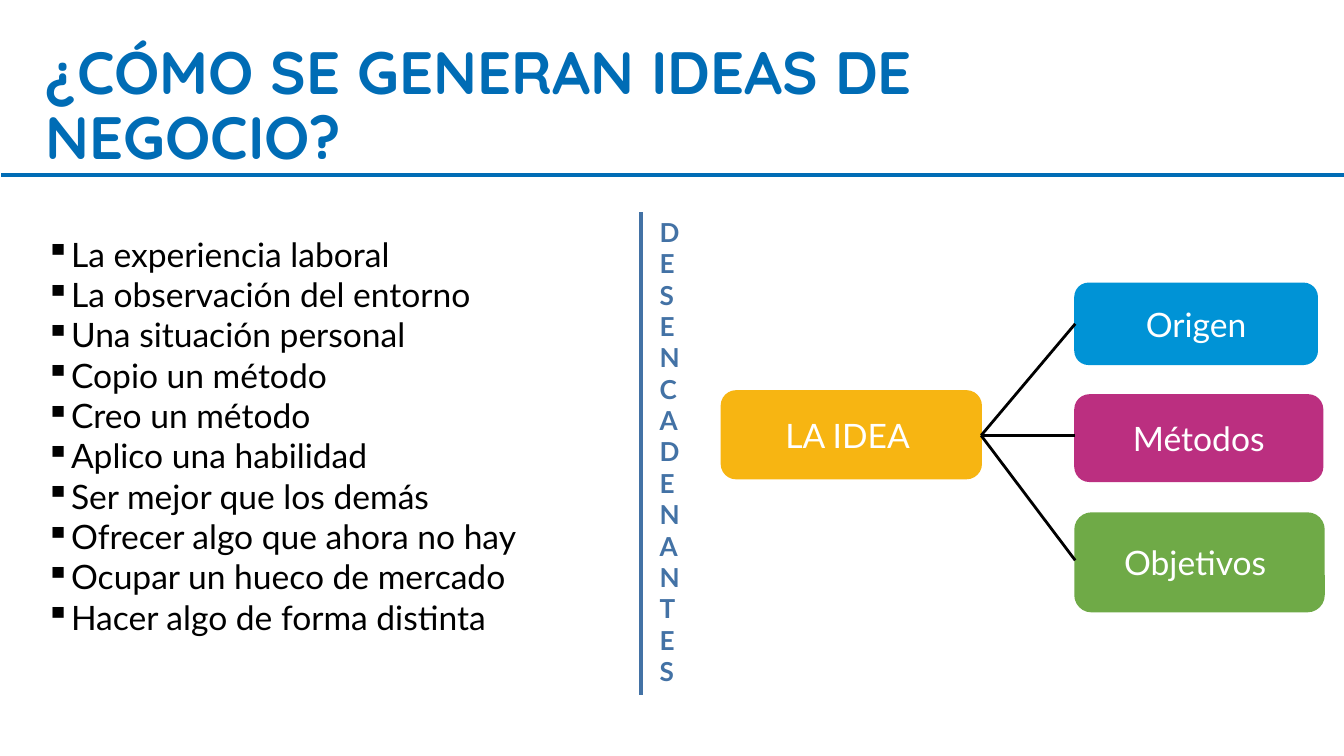
from dataclasses import dataclass

from lxml.etree import SubElement
from pptx import Presentation
from pptx.dml.color import RGBColor as RGB
from pptx.enum.shapes import MSO_CONNECTOR as CONNECTOR, MSO_SHAPE as SHAPE
from pptx.enum.text import MSO_ANCHOR as ANCHOR, MSO_AUTO_SIZE as AUTO_SIZE, PP_ALIGN as ALIGN
from pptx.oxml.ns import qn
from pptx.util import Pt


@dataclass(frozen=True)
class Theme:
    title_blue: RGB = RGB.from_string("006CB5")
    trigger_blue: RGB = RGB.from_string("4372A5")
    amber: RGB = RGB.from_string("F7B512")
    sky: RGB = RGB.from_string("0093D6")
    magenta: RGB = RGB.from_string("BB2F80")
    green: RGB = RGB.from_string("6FAA47")
    black: RGB = RGB.from_string("000000")
    white: RGB = RGB.from_string("FFFFFF")
    heading_font: str = "Quicksand"
    body_font: str = "Lato"
    title_size: int = 32
    body_size: int = 18
    trigger_size: int = 14


theme = Theme()


def write_lines(frame, lines, **font_values):
    """Put one paragraph per line in the frame and format each with the font values."""
    frame.word_wrap = True
    frame.text = "\n".join(lines)
    for paragraph in frame.paragraphs:
        font = paragraph.runs[0].font
        font.color.rgb = font_values["color"]
        for name, value in font_values.items():
            if name != "color":
                setattr(font, name, value)


def draw_line(x1, y1, x2, y2, color, width):
    line = slide.shapes.add_connector(CONNECTOR.STRAIGHT, Pt(x1), Pt(y1), Pt(x2), Pt(y2))
    line.line.color.rgb = color
    line.line.width = Pt(width)
    SubElement(line._element.spPr, qn("a:effectLst"))


deck = Presentation()
deck.slide_width, deck.slide_height = Pt(720), Pt(405)
slide = deck.slides.add_slide(deck.slide_layouts[5])

# Title and its rule
title = slide.shapes.title
title_place = {"left": 17.3, "top": 18.7, "width": 638, "height": 77.8}
for name, value in title_place.items():
    setattr(title, name, Pt(value))
write_lines(title.text_frame, ["¿CÓMO SE GENERAN IDEAS DE NEGOCIO?"], name=theme.heading_font,
            size=Pt(theme.title_size), bold=True, color=theme.title_blue)
title.text_frame.auto_size = AUTO_SIZE.NONE
title.text_frame.vertical_anchor = ANCHOR.MIDDLE
title.text_frame.paragraphs[0].alignment = ALIGN.LEFT
title.text_frame.paragraphs[0].line_spacing = 0.9
draw_line(0.7, 93.6, 720, 93.6, theme.title_blue, 2)

# Ways in which ideas arise
sources = slide.shapes.add_textbox(Pt(17.3), Pt(121.7), Pt(320), Pt(225))
write_lines(sources.text_frame, [
    "La experiencia laboral",
    "La observación del entorno",
    "Una situación personal",
    "Copio un método",
    "Creo un método",
    "Aplico una habilidad",
    "Ser mejor que los demás",
    "Ofrecer algo que ahora no hay",
    "Ocupar un hueco de mercado",
    "Hacer algo de forma distinta",
], name=theme.body_font, size=Pt(theme.body_size), color=theme.black)
for paragraph in sources.text_frame.paragraphs:
    properties = paragraph._p.get_or_add_pPr()
    properties.set("marL", str(Pt(13.7)))
    properties.set("indent", str(-Pt(13.7)))
    SubElement(properties, qn("a:buChar"), char="▪")

# Vertical word beside the divider
draw_line(343.4, 113.8, 343.4, 372.2, theme.trigger_blue, 2.25)
triggers = slide.shapes.add_textbox(Pt(346.3), Pt(112.3), Pt(30), Pt(278.6))
write_lines(triggers.text_frame, "DESENCADENANTES", name=theme.body_font,
            size=Pt(theme.trigger_size), bold=True, color=theme.trigger_blue)

# The idea and its three branches: text, left, top, width, height, colour
boxes = [
    ("LA IDEA ", 386.6, 209.5, 139, 46.8, theme.amber),
    ("Origen", 576, 151.9, 129.6, 43.2, theme.sky),
    ("Métodos", 576, 211.7, 132.5, 46.1, theme.magenta),
    ("Objetivos ", 576, 275, 133.2, 52.6, theme.green),
]
for text, left, top, width, height, color in boxes:
    box = slide.shapes.add_shape(SHAPE.ROUNDED_RECTANGLE, Pt(left), Pt(top), Pt(width), Pt(height))
    box.shadow.inherit = False
    box.fill.solid()
    box.fill.fore_color.rgb = color
    box.line.color.rgb = color
    box.line.width = Pt(1)
    write_lines(box.text_frame, [text], name=theme.body_font,
                size=Pt(theme.body_size), color=theme.white)
    box.text_frame.vertical_anchor = ANCHOR.MIDDLE
    box.text_frame.paragraphs[0].alignment = ALIGN.CENTER

for branch_y in (173.5, 233.3, 300.2):
    draw_line(525.6, 233.3, 576, branch_y, theme.black, 1.5)

deck.save("out.pptx")
